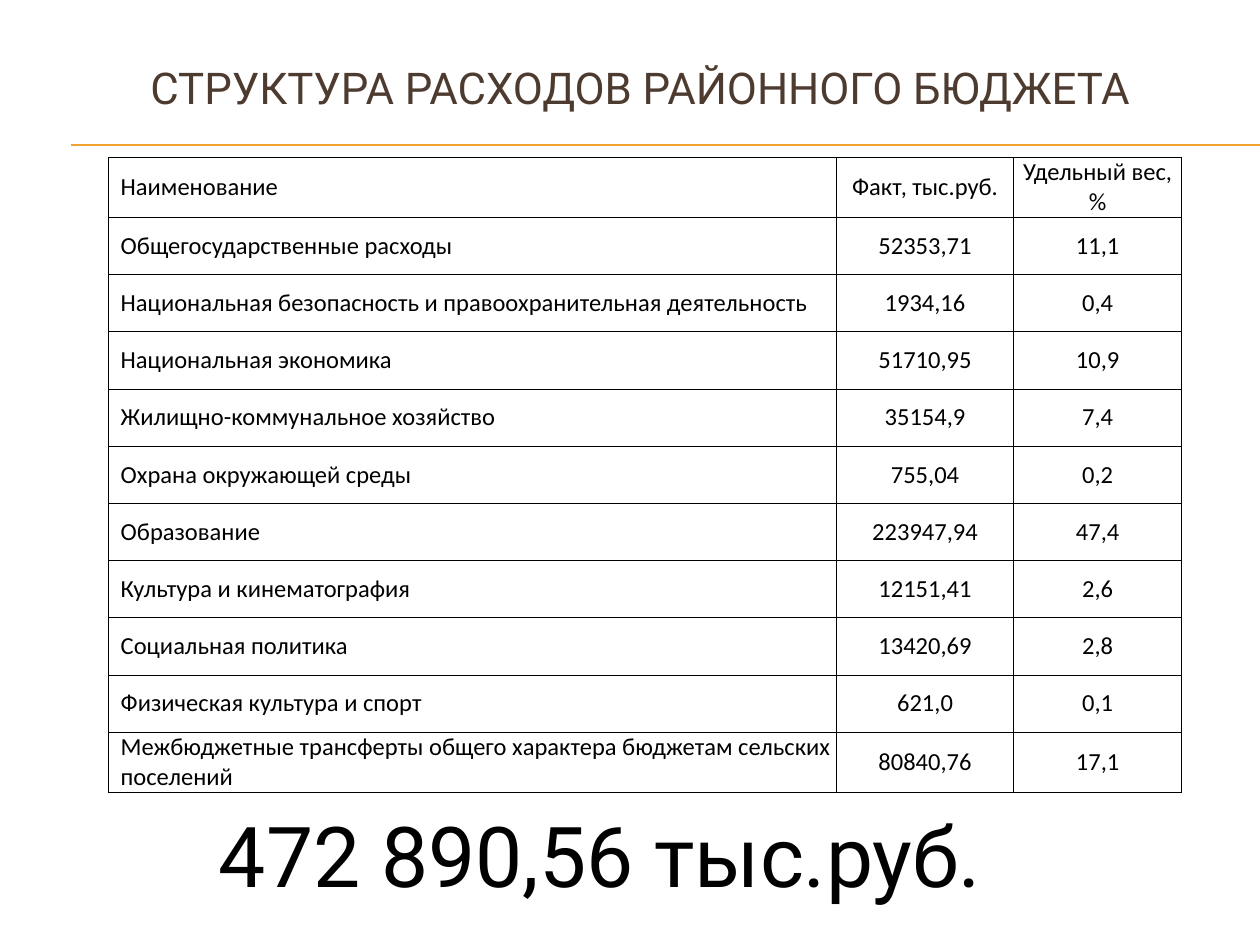
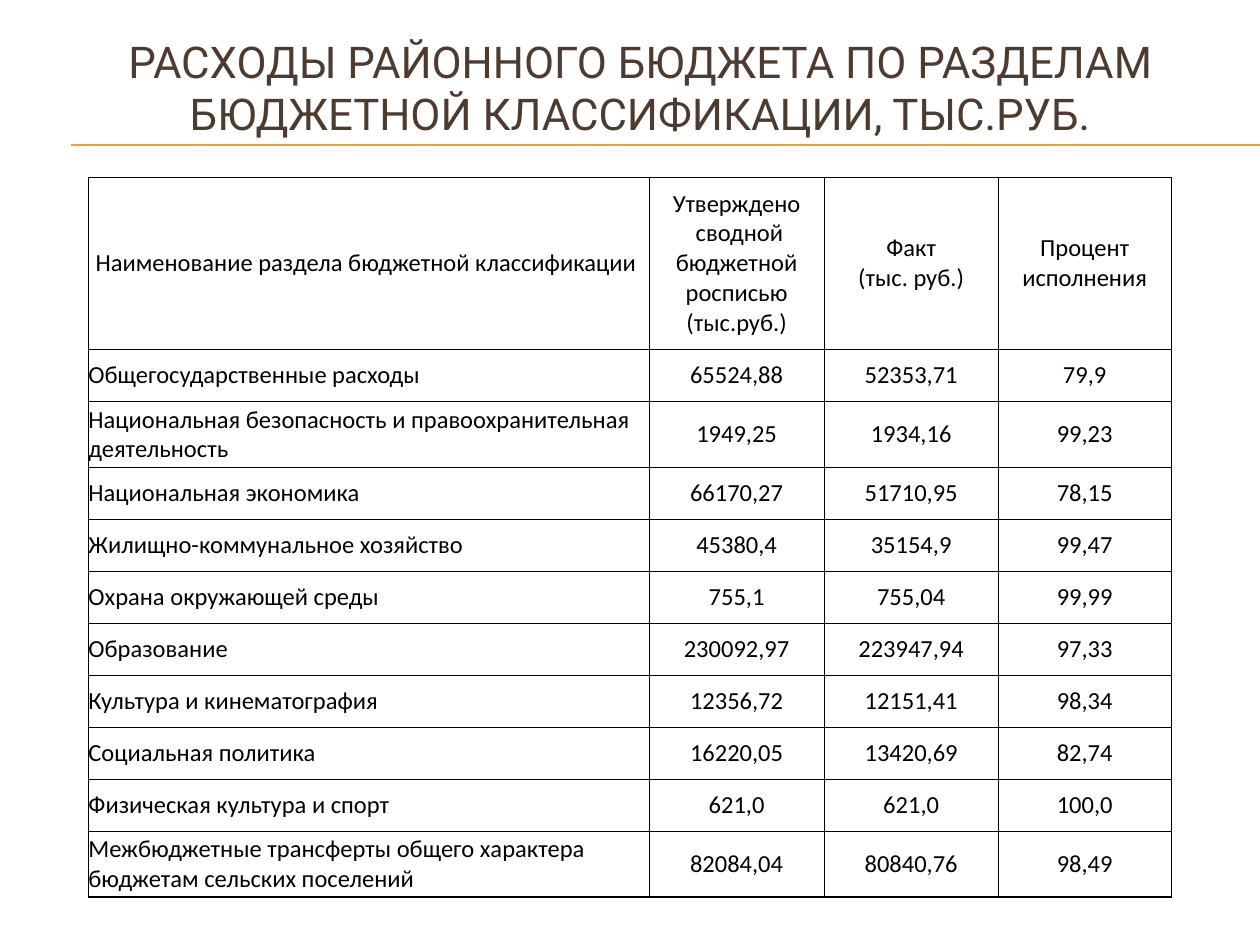
"""Build two slides with tables of district budget expenditure."""
import pptx
import pptx.dml.color
import pptx.enum.shapes
import pptx.enum.text
import pptx.oxml
import pptx.oxml.ns
import pptx.util

Pt = pptx.util.Pt
RGBColor = pptx.dml.color.RGBColor
PP_ALIGN = pptx.enum.text.PP_ALIGN
MSO_ANCHOR = pptx.enum.text.MSO_ANCHOR

BLACK = RGBColor(0x00, 0x00, 0x00)
BROWN = RGBColor(0x4E, 0x3B, 0x30)
AMBER = RGBColor(0xF0, 0xA2, 0x2E)

HEADING_FONT = "Roboto"
TABLE_FONT = "Calibri"
THIN = {"lnL": 0.5, "lnR": 0.5, "lnT": 0.5, "lnB": 0.5}
HEAVY_BOTTOM = {**THIN, "lnB": 1}
TOP_ONLY = {"lnL": 0, "lnR": 0, "lnT": 1, "lnB": 0}

SECTIONS = [
    "Общегосударственные расходы",
    "Национальная безопасность и правоохранительная деятельность",
    "Национальная экономика",
    "Жилищно-коммунальное хозяйство",
    "Охрана окружающей среды",
    "Образование",
    "Культура и кинематография",
    "Социальная политика",
    "Физическая культура и спорт",
    "Межбюджетные трансферты общего характера бюджетам сельских поселений",
]
ACTUAL = ["52353,71", "1934,16", "51710,95", "35154,9", "755,04",
          "223947,94", "12151,41", "13420,69", "621,0", "80840,76"]
SHARES = ["11,1", "0,4", "10,9", "7,4", "0,2", "47,4", "2,6", "2,8", "0,1", "17,1"]
APPROVED = ["65524,88", "1949,25", "66170,27", "45380,4", "755,1",
            "230092,97", "12356,72", "16220,05", "621,0", "82084,04"]
EXECUTION = ["79,9", "99,23", "78,15", "99,47", "99,99",
             "97,33", "98,34", "82,74", "100,0", "98,49"]

STRUCTURE_HEADER = ["Наименование", "Факт, тыс.руб.", "Удельный вес, %"]
EXECUTION_HEADER = [
    "Наименование раздела бюджетной классификации ",
    "Утверждено\n сводной бюджетной росписью\n(тыс.руб.)",
    "Факт\n(тыс. руб.)",
    "Процент исполнения",
]


def format_text(text_frame, font_name, size, color, alignment):
    """Give every paragraph and run of a text frame one look."""
    for paragraph in text_frame.paragraphs:
        paragraph.alignment = alignment
        for run in paragraph.runs:
            run.font.name = font_name
            run.font.size = Pt(size)
            run.font.color.rgb = color


def add_heading_text(slide, text, box, size, color, anchor):
    """Add a centred text box in the heading font."""
    text_frame = slide.shapes.add_textbox(*map(Pt, box)).text_frame
    text_frame.word_wrap = True
    text_frame.vertical_anchor = anchor
    text_frame.text = text
    format_text(text_frame, HEADING_FONT, size, color, PP_ALIGN.CENTER)


def add_title_rule(slide):
    """Draw the double amber rule below the title."""
    for y in (82.9, 83.2):
        connector = slide.shapes.add_connector(
            pptx.enum.shapes.MSO_CONNECTOR.STRAIGHT, Pt(40.5), Pt(y), Pt(720), Pt(y))
        connector.line.color.rgb = AMBER
        connector.line.width = Pt(0.75)
        properties = connector._element.spPr
        properties.append(properties.makeelement(pptx.oxml.ns.qn("a:effectLst"), {}))


def add_titled_slide(presentation, title):
    """Add a blank slide with the common rule and title."""
    slide = presentation.slides.add_slide(presentation.slide_layouts[6])
    add_title_rule(slide)
    add_heading_text(slide, title, (23.8, 16.8, 684, 66), 25, BROWN, MSO_ANCHOR.MIDDLE)
    return slide


def set_borders(cell, borders):
    """Draw black cell borders of the given widths, and none where it is zero."""
    properties = cell._tc.get_or_add_tcPr()
    for position, (side, width) in enumerate(borders.items()):
        fill = f'<a:solidFill><a:srgbClr val="{BLACK}"/></a:solidFill>' if width else "<a:noFill/>"
        properties.insert(position, pptx.oxml.parse_xml(
            f'<a:{side} {pptx.oxml.ns.nsdecls("a")} w="{Pt(width)}">{fill}</a:{side}>'))


def format_cell(cell, alignment, indent, borders):
    """Set the margins, text look and borders of a table cell."""
    cell.margin_left = Pt(indent)
    cell.margin_right = cell.margin_top = cell.margin_bottom = Pt(0)
    cell.vertical_anchor = MSO_ANCHOR.MIDDLE
    cell.fill.background()
    format_text(cell.text_frame, TABLE_FONT, 14, BLACK, alignment)
    set_borders(cell, borders)


def add_budget_table(slide, position, column_widths, row_heights, rows,
                     name_span=1, name_indent=0, header_alignment=PP_ALIGN.LEFT):
    """Add a ruled table; rows beyond the given ones close it with a heavier line."""
    table = slide.shapes.add_table(
        len(row_heights), len(column_widths), *map(Pt, position),
        Pt(sum(column_widths)), Pt(sum(row_heights))).table
    table.first_row = table.horz_banding = False
    for column, width in zip(table.columns, column_widths):
        column.width = Pt(width)
    for row, height in zip(table.rows, row_heights):
        row.height = Pt(height)
    for row_index, values in enumerate(rows):
        if name_span > 1:
            table.cell(row_index, 0).merge(table.cell(row_index, name_span - 1))
        table.cell(row_index, 0).text_frame.text = values[0]
        for column_index, text in enumerate(values[1:], name_span):
            table.cell(row_index, column_index).text_frame.text = text
    for row_index, row in enumerate(table.rows):
        name_alignment = PP_ALIGN.LEFT if row_index else header_alignment
        if row_index >= len(rows):
            borders = TOP_ONLY
        elif row_index == len(rows) - 1 and len(row_heights) > len(rows):
            borders = HEAVY_BOTTOM
        else:
            borders = THIN
        for column_index, cell in enumerate(row.cells):
            is_name = column_index < name_span
            format_cell(cell, name_alignment if is_name else PP_ALIGN.CENTER,
                        name_indent if is_name else 0, borders)


def add_structure_slide(presentation):
    """Show the share of each section in total expenditure."""
    slide = add_titled_slide(presentation, "СТРУКТУРА РАСХОДОВ РАЙОННОГО БЮДЖЕТА")
    add_budget_table(
        slide, (62, 90), (416, 101.3, 96), [34.2] + [32.7] * 9 + [34.2],
        [STRUCTURE_HEADER, *zip(SECTIONS, ACTUAL, SHARES)], name_indent=7)
    add_heading_text(slide, "472 890,56 тыс.руб.", (113, 455.8, 460, 62),
                     48, BLACK, MSO_ANCHOR.TOP)


def add_execution_slide(presentation):
    """Compare approved and actual expenditure by section."""
    slide = add_titled_slide(
        presentation,
        "РАСХОДЫ РАЙОННОГО БЮДЖЕТА ПО РАЗДЕЛАМ БЮДЖЕТНОЙ КЛАССИФИКАЦИИ, ТЫС.РУБ.")
    add_budget_table(
        slide, (50.5, 101.3), (106.5, 105.5, 108.5, 100, 99.5, 98.8),
        [98.4, 29.7, 37.8] + [29.7] * 7 + [37.8, 17.3],
        [EXECUTION_HEADER, *zip(SECTIONS, APPROVED, ACTUAL, EXECUTION)],
        name_span=3, header_alignment=PP_ALIGN.CENTER)


def main():
    """Create and save the presentation."""
    presentation = pptx.Presentation()
    presentation.slide_width = Pt(720)
    presentation.slide_height = Pt(540)
    add_structure_slide(presentation)
    add_execution_slide(presentation)
    presentation.save("out.pptx")


if __name__ == "__main__":
    main()
